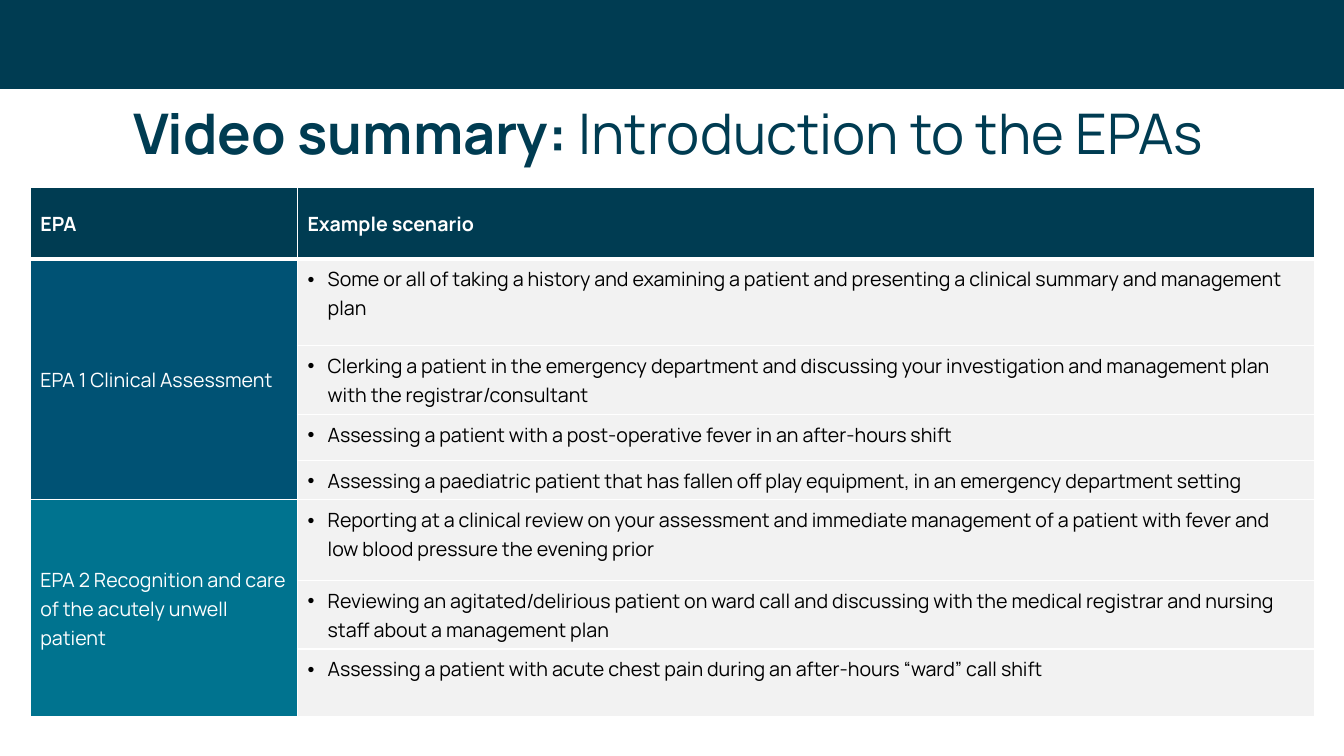
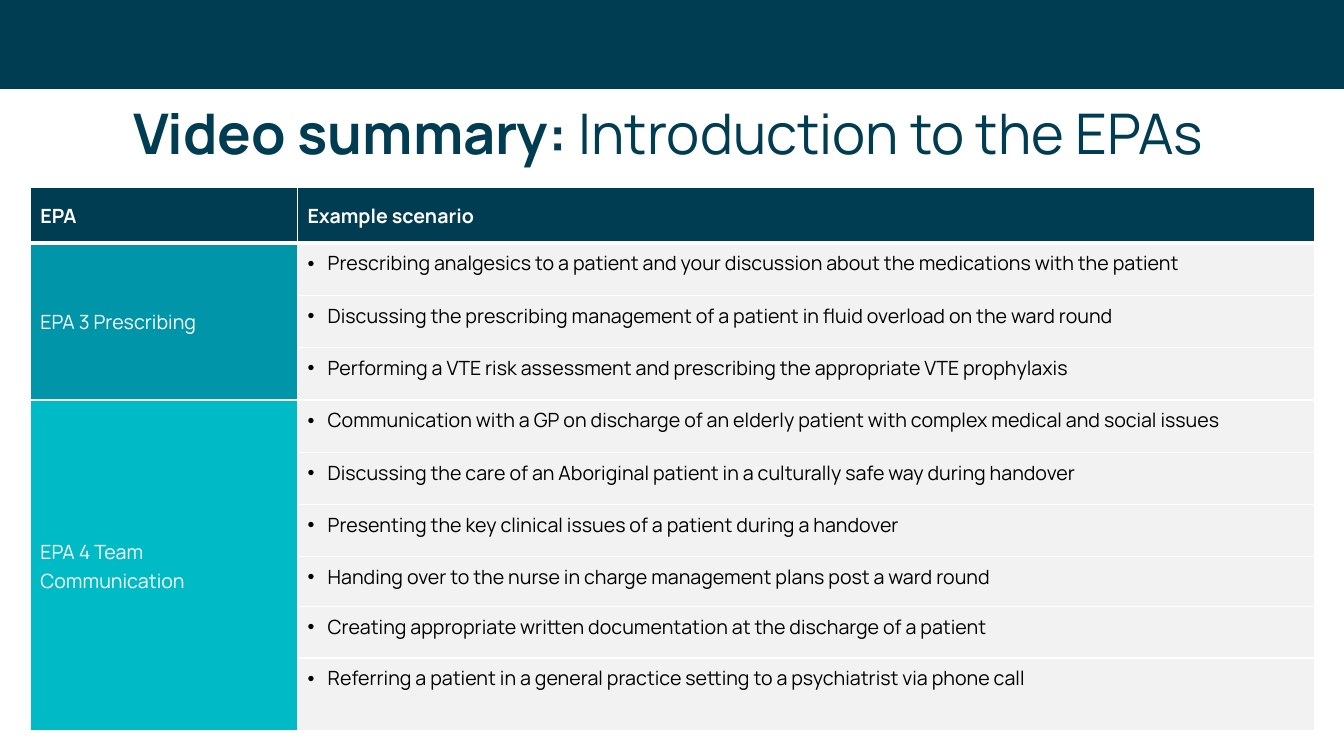
"""Build two slides that list example scenarios for each EPA."""
import pptx
import pptx.dml.color
import pptx.enum.shapes
import pptx.enum.text
import pptx.oxml
import pptx.oxml.ns
import pptx.util
from dataclasses import dataclass

Inches, Pt = pptx.util.Inches, pptx.util.Pt
Rgb = pptx.dml.color.RGBColor.from_string
MIDDLE = pptx.enum.text.MSO_ANCHOR.MIDDLE


@dataclass(frozen=True)
class Theme:
    face: str = "Manrope"
    navy: str = "003C52"
    white: str = "FFFFFF"
    black: str = "000000"
    grey: str = "F2F2F2"
    title: int = 40
    body: int = 14
    thin: int = 1
    thick: int = 3


THEME = Theme()
TITLE = [("Video summary: ", True), ("Introduction to the EPAs", False)]
HEADS = ["EPA", "Example scenario"]
WIDTHS = [2.65, 10.09]
SLIDES = [
    {"head": 0.71, "groups": [
        ("EPA 1 Clinical Assessment", "005274", [
            (0.86, "Some or all of taking a history and examining a patient and "
                   "presenting a clinical summary and management plan"),
            (0.68, "Clerking a patient in the emergency department and discussing "
                   "your investigation and management plan with the registrar/consultant"),
            (0.46, "Assessing a patient with a post-operative fever in an after-hours shift"),
            (0.39, "Assessing a paediatric patient that has fallen off play equipment, "
                   "in an emergency department setting"),
        ]),
        ("EPA 2 Recognition and care of the acutely unwell patient", "00738F", [
            (0.8, "Reporting at a clinical review on your assessment and immediate "
                  "management of a patient with fever and low blood pressure the evening prior"),
            (0.68, "Reviewing an agitated/delirious patient on ward call and discussing "
                   "with the medical registrar and nursing staff about a management plan"),
            (0.67, "Assessing a patient with acute chest pain during an after-hours "
                   "“ward” call shift"),
        ]),
    ]},
    {"head": 0.55, "groups": [
        ("EPA 3 Prescribing", "0095A9", [
            (0.52, "Prescribing analgesics to a patient and your discussion about "
                   "the medications with the patient"),
            (0.52, "Discussing the prescribing management of a patient in fluid "
                   "overload on the ward round"),
            (0.52, "Performing a VTE risk assessment and prescribing the appropriate "
                   "VTE prophylaxis"),
        ]),
        ("EPA 4 Team Communication", "00BAC6", [
            (0.52, "Communication with a GP on discharge of an elderly patient with "
                   "complex medical and social issues"),
            (0.52, "Discussing the care of an Aboriginal patient in a culturally safe "
                   "way during handover"),
            (0.51, "Presenting the key clinical issues of a patient during a handover"),
            (0.5, "Handing over to the nurse in charge management plans post a ward round"),
            (0.51, "Creating appropriate written documentation at the discharge of a patient"),
            (0.72, "Referring a patient in a general practice setting to a psychiatrist "
                   "via phone call"),
        ]),
    ]},
]


def set_font(para, size, color, bold=None):
    font = para.font
    font.name, font.size, font.bold = THEME.face, Pt(size), bold
    font.color.rgb = Rgb(color)


def add_bullet(para):
    props = para._p.get_or_add_pPr()
    props.set("marL", str(Inches(0.2)))
    props.set("indent", str(-Inches(0.2)))
    for tag, key, value in [("a:buFont", "typeface", "Arial"), ("a:buChar", "char", "•")]:
        props.append(pptx.oxml.parse_xml(
            f'<{tag} {pptx.oxml.ns.nsdecls("a")} {key}="{value}"/>'))


def set_edges(cell, top, bottom):
    props = cell._tc.get_or_add_tcPr()
    for side, width in zip("LRTB", (THEME.thin, THEME.thin, top, bottom)):
        props.append(pptx.oxml.parse_xml(
            f'<a:ln{side} {pptx.oxml.ns.nsdecls("a")} w="{Pt(width)}"><a:solidFill>'
            f'<a:srgbClr val="{THEME.white}"/></a:solidFill></a:ln{side}>'))


def paint(cell, fill):
    cell.fill.solid()
    cell.fill.fore_color.rgb = Rgb(fill)


def write(cell, text, color, bold=False, bullet=False):
    para = cell.text_frame.paragraphs[0]
    para.text = text
    if bullet:
        add_bullet(para)
    else:
        cell.vertical_anchor = MIDDLE
    para.line_spacing, para.space_after = 1.07, Pt(8)
    set_font(para, THEME.body, color, bold)


def add_grid(slide, head, groups):
    highs = [head] + [high for group in groups for high, text in group[2]]
    grid = slide.shapes.add_table(
        len(highs), len(WIDTHS), Inches(0.3), Inches(1.86),
        Inches(sum(WIDTHS)), Inches(sum(highs))).table
    for column, width in zip(grid.columns, WIDTHS):
        column.width = Inches(width)
    for index, high in enumerate(highs):
        grid.rows[index].height = Inches(high)
        top = THEME.thick if index == 1 else THEME.thin
        bottom = THEME.thick if index == 0 else THEME.thin
        for cell in grid.rows[index].cells:
            set_edges(cell, top, bottom)
    for index, text in enumerate(HEADS):
        cell = grid.cell(0, index)
        paint(cell, THEME.navy)
        write(cell, text, THEME.white, bold=True)
    first = 1
    for label, fill, items in groups:
        for row, (high, text) in enumerate(items, first):
            paint(grid.cell(row, 0), fill)
            paint(grid.cell(row, 1), THEME.grey)
            write(grid.cell(row, 1), text, THEME.black, bullet=True)
        cell = grid.cell(first, 0)
        cell.merge(grid.cell(first + len(items) - 1, 0))
        write(cell, label, THEME.white)
        first += len(items)


def add_title(slide):
    title = slide.shapes.title
    title.left, title.top = Inches(1.22), Inches(0.89)
    title.width, title.height = Inches(11.91), Inches(0.93)
    frame = title.text_frame
    frame.vertical_anchor = MIDDLE
    frame.auto_size = pptx.enum.text.MSO_AUTO_SIZE.NONE
    para = frame.paragraphs[0]
    para.alignment, para.line_spacing = pptx.enum.text.PP_ALIGN.LEFT, 0.9
    set_font(para, THEME.title, THEME.navy)
    for text, bold in TITLE:
        run = para.add_run()
        run.text, run.font.bold = text, bold


def add_band(deck, slide):
    band = slide.shapes.add_shape(
        pptx.enum.shapes.MSO_SHAPE.RECTANGLE, 0, 0, deck.slide_width, Inches(0.88))
    band.shadow.inherit = False
    band.fill.solid()
    band.fill.fore_color.rgb = band.line.color.rgb = Rgb(THEME.navy)
    band.line.width = Pt(THEME.thin)
    deck.slide_master.placeholders[0].element.addprevious(band.element)


def main():
    deck = pptx.Presentation()
    deck.slide_width, deck.slide_height = Inches(13.33), Inches(7.5)
    layout = deck.slide_layouts.get_by_name("Title Only")
    for page in SLIDES:
        slide = deck.slides.add_slide(layout)
        add_title(slide)
        add_grid(slide, page["head"], page["groups"])
    add_band(deck, deck.slides[0])
    deck.save("out.pptx")


if __name__ == "__main__":
    main()
